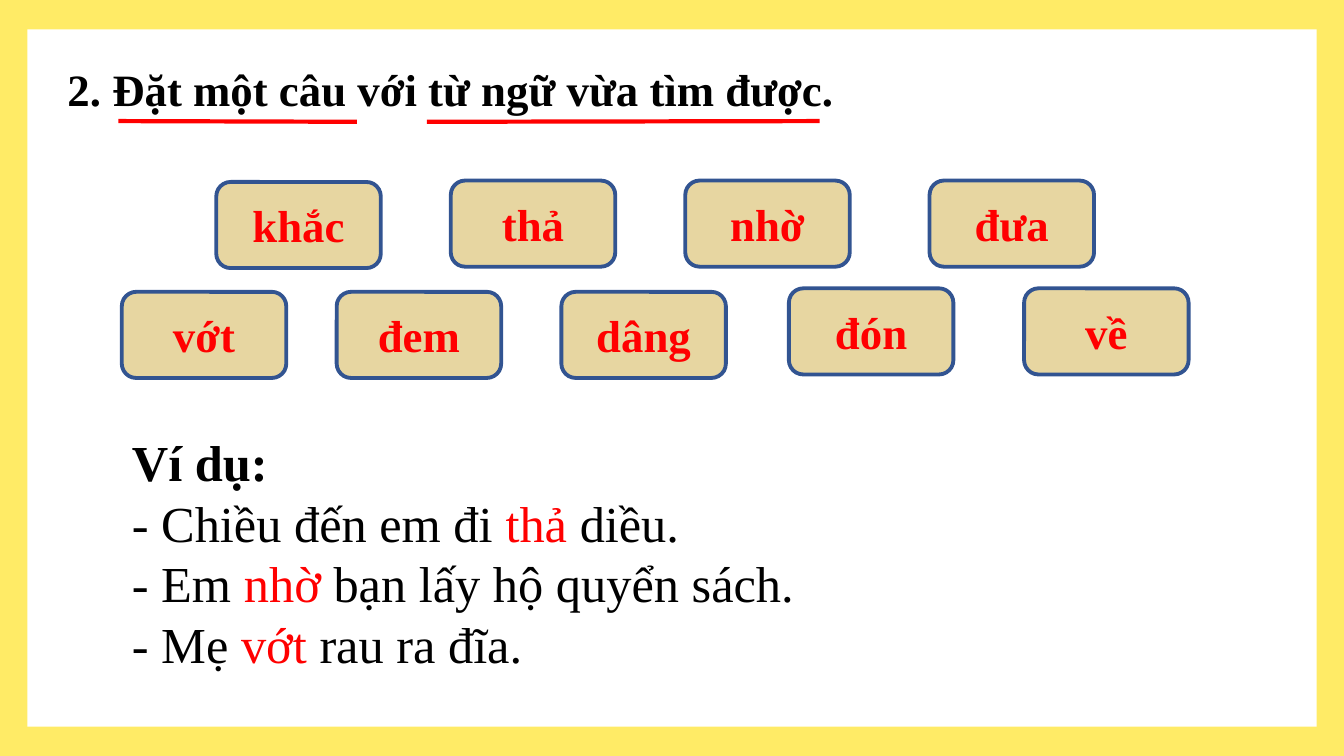
from lxml import etree
from pptx import Presentation
from pptx.dml.color import RGBColor
from pptx.enum.shapes import MSO_CONNECTOR, MSO_SHAPE
from pptx.enum.text import MSO_ANCHOR, MSO_AUTO_SIZE, PP_ALIGN
from pptx.oxml.ns import qn
from pptx.util import Pt

RECTANGLE = MSO_SHAPE.RECTANGLE
ROUNDED = MSO_SHAPE.ROUNDED_RECTANGLE
STRAIGHT = MSO_CONNECTOR.STRAIGHT
TOP, MIDDLE = MSO_ANCHOR.TOP, MSO_ANCHOR.MIDDLE
LEFT, CENTER = PP_ALIGN.LEFT, PP_ALIGN.CENTER
NO_AUTO_SIZE = MSO_AUTO_SIZE.NONE

FONT = "Times New Roman"
BLACK, RED, WHITE = "000000", "FF0000", "FFFFFF"
YELLOW, GOLD, BLUE = "FFEB66", "BF9000", "325491"
SLIDE_WIDTH, SLIDE_HEIGHT = 960, 540
CARD_WIDTH, CARD_HEIGHT = 117.5, 61.5

WORDS = [
    ("khắc", 67.5, 1),
    ("thả", 235, 0),
    ("nhờ", 402.5, 0),
    ("đưa", 577, 0),
    ("vớt", 0, 79.5),
    ("đem", 153.5, 79.5),
    ("dâng", 314, 79.5),
    ("đón", 476.5, 77),
    ("về", 644.5, 77),
]
EXAMPLES = [
    ("- Chiều đến em đi ", "thả ", "diều."),
    ("- Em ", "nhờ ", "bạn lấy hộ quyển sách."),
    ("- Mẹ ", "vớt ", "rau ra đĩa."),
]


def color(value):
    return RGBColor.from_string(value)


def write(paragraph, text, size=32, hue=BLACK, bold=False, align=LEFT):
    paragraph.alignment = align
    paragraph.space_before = Pt(0)
    run = paragraph.add_run()
    run.text = text
    run.font.name = FONT
    run.font.size = Pt(size)
    run.font.bold = bold
    run.font.color.rgb = color(hue)


def place(shape, left, top, width, height):
    shape.left, shape.top = Pt(left), Pt(top)
    shape.width, shape.height = Pt(width), Pt(height)
    frame = shape.text_frame
    frame.word_wrap = True
    frame.auto_size = NO_AUTO_SIZE
    frame.vertical_anchor = TOP
    return frame


def remove_bullet(paragraph):
    properties = paragraph._p.get_or_add_pPr()
    properties.set("marL", "0")
    properties.set("indent", "0")
    etree.SubElement(properties, qn("a:buNone"))


def add_panel(slide, kind, left, top, width, height, fill):
    shape = slide.shapes.add_shape(kind, Pt(left), Pt(top), Pt(width), Pt(height))
    shape.shadow.inherit = False
    shape.fill.solid()
    shape.fill.fore_color.rgb = color(fill)
    shape.line.fill.background()
    return shape


def add_frame(slide, left, top, width, height):
    placeholders = list(slide.placeholders)
    add_panel(slide, RECTANGLE, left, top, width, height, YELLOW)
    add_panel(slide, RECTANGLE, left + 19.5, top + 21, width - 39, height - 42, WHITE)
    for placeholder in placeholders:
        placeholder.element.getparent().append(placeholder.element)


def add_underline(slide, left, top, right, bottom):
    connector = slide.shapes.add_connector(
        STRAIGHT, Pt(left), Pt(top), Pt(right), Pt(bottom)
    )
    connector.line.color.rgb = color(RED)
    connector.line.width = Pt(3)
    etree.SubElement(connector.element.spPr, qn("a:effectLst"))


def add_heading(slide, left, top, width, height):
    frame = place(slide.shapes.title, left, top, width, height)
    write(frame.paragraphs[0], "2. Đặt một câu với từ ngữ vừa tìm được.", bold=True)
    baseline = top + height
    add_underline(slide, left + 43.5, baseline, left + 214, baseline + 0.5)
    add_underline(slide, left + 264, baseline + 0.5, left + 544.5, baseline)


def add_word_cards(slide, left, top):
    for word, across, down in WORDS:
        card = add_panel(
            slide, ROUNDED, left + across, top + down, CARD_WIDTH, CARD_HEIGHT, GOLD
        )
        hue = card.fill._xPr.find(".//" + qn("a:srgbClr"))
        etree.SubElement(hue, qn("a:alpha"), val="37000")
        card.line.color.rgb = color(BLUE)
        card.line.width = Pt(2.75)
        card.text_frame.vertical_anchor = MIDDLE
        paragraph = card.text_frame.paragraphs[0]
        write(paragraph, word, hue=RED, bold=True, align=CENTER)


def add_examples(slide, left, top, width, height):
    frame = place(slide.placeholders[1], left, top, width, height)
    heading = frame.paragraphs[0]
    write(heading, "Ví dụ:", size=36, bold=True)
    remove_bullet(heading)
    for before, word, after in EXAMPLES:
        paragraph = frame.add_paragraph()
        write(paragraph, before, size=36)
        write(paragraph, word, size=36, hue=RED)
        write(paragraph, after, size=36)
        remove_bullet(paragraph)


def main():
    presentation = Presentation()
    presentation.slide_width = Pt(SLIDE_WIDTH)
    presentation.slide_height = Pt(SLIDE_HEIGHT)
    slide = presentation.slides.add_slide(presentation.slide_layouts[1])
    add_frame(slide, 0, 0, SLIDE_WIDTH, SLIDE_HEIGHT)
    add_heading(slide, 41, 40.5, 890.5, 46)
    add_word_cards(slide, 87, 129)
    add_examples(slide, 87, 304.5, 756.5, 225.5)
    presentation.save("out.pptx")


if __name__ == "__main__":
    main()
